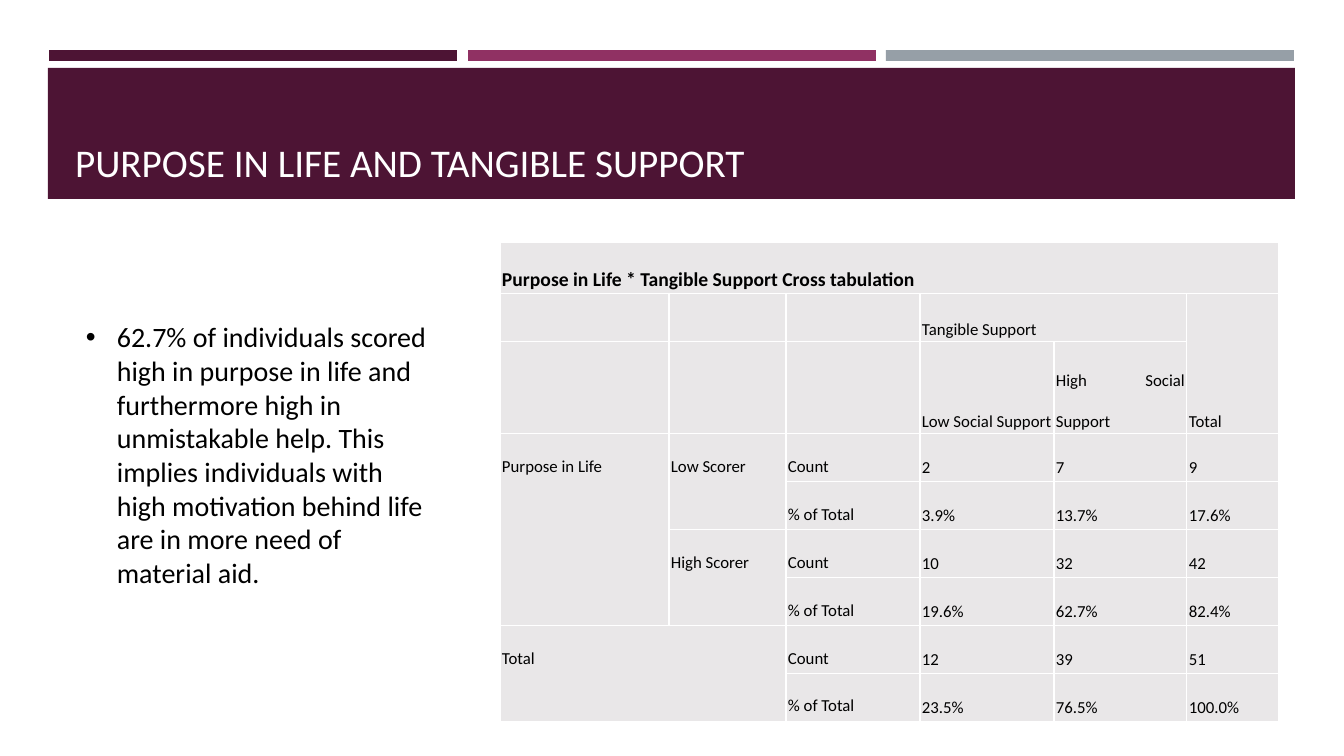
from dataclasses import dataclass

from lxml import etree
from pptx import Presentation, util as u
from pptx.dml.color import RGBColor
from pptx.enum import shapes, text
from pptx.oxml import ns

PX = 914400 / 100.8


@dataclass(frozen=True)
class Theme:
    font: str = "Calibri"
    plum: str = "4D1434"
    magenta: str = "903163"
    slate: str = "969FA7"
    cell: str = "E9E7E8"
    white: str = "FFFFFF"
    black: str = "000000"
    title_size: int = 28
    body_size: int = 20
    caption_size: int = 14
    cell_size: int = 12


theme = Theme()


def px(*lengths):
    """Turn px lengths into a list of EMU lengths."""
    return [u.Emu(round(length * PX)) for length in lengths]


def format_runs(paragraph, size, color, bold=False):
    for run in paragraph.runs:
        run.font.name = theme.font
        run.font.size = u.Pt(size)
        run.font.bold = bold
        run.font.color.rgb = RGBColor.from_string(color)


presentation = Presentation()
presentation.slide_width, presentation.slide_height = px(1344, 756)
slide = presentation.slides.add_slide(presentation.slide_layouts[5])

# Three accent bars above the title band
for left, top, width, height, color in [
    (49, 50, 408, 11, theme.plum),
    (468, 50, 408, 11, theme.magenta),
    (886, 50, 408, 11, theme.slate),
    (48, 68, 1247, 131, theme.plum),
]:
    band = slide.shapes.add_shape(shapes.MSO_SHAPE.RECTANGLE, *px(left, top, width, height))
    band.shadow.inherit = False
    band.fill.solid()
    band.fill.fore_color.rgb = RGBColor.from_string(color)
    band.line.fill.background()

# Title, in front of its band
title = slide.shapes.title
title.left, title.top, title.width, title.height = px(65, 78, 1216, 112)
band.element.addnext(title.element)
title_frame = title.text_frame
title_frame.text = "PURPOSE IN LIFE AND TANGIBLE SUPPORT"
title_frame.auto_size = text.MSO_AUTO_SIZE.NONE
title_frame.vertical_anchor = text.MSO_ANCHOR.BOTTOM
title_frame.paragraphs[0].alignment = text.PP_ALIGN.LEFT
format_runs(title_frame.paragraphs[0], theme.title_size, theme.white)

# Cross tabulation
rows = [
    ["Purpose in Life * Tangible Support Cross tabulation", "", "", "", "", ""],
    ["", "", "", "Tangible Support", "", "Total"],
    ["", "", "", "Low Social Support", "High Social Support", ""],
    ["Purpose in Life", "Low Scorer", "Count", "2", "7", "9"],
    ["", "", "% of Total", "3.9%", "13.7%", "17.6%"],
    ["", "High Scorer", "Count", "10", "32", "42"],
    ["", "", "% of Total", "19.6%", "62.7%", "82.4%"],
    ["Total", "", "Count", "12", "39", "51"],
    ["", "", "% of Total", "23.5%", "76.5%", "100.0%"],
]
column_widths = [169, 117, 134, 134, 133, 92]
row_heights = [48, 48, 92] + [48] * 6
merges = [  # first row, first column, last row, last column
    (0, 0, 0, 5), (1, 3, 1, 4), (1, 5, 2, 5), (3, 0, 6, 0),
    (3, 1, 4, 1), (5, 1, 6, 1), (7, 0, 8, 1),
]
table = slide.shapes.add_table(
    len(rows), len(column_widths),
    *px(500, 242, sum(column_widths), sum(row_heights))).table
table.first_row = table.horz_banding = False
for column, width in zip(table.columns, px(*column_widths)):
    column.width = width
for row, height in zip(table.rows, px(*row_heights)):
    row.height = height
for first_row, first_column, last_row, last_column in merges:
    table.cell(first_row, first_column).merge(table.cell(last_row, last_column))

for row_index, row in enumerate(rows):
    for column_index, words in enumerate(row):
        cell = table.cell(row_index, column_index)
        cell.fill.solid()
        cell.fill.fore_color.rgb = RGBColor.from_string(theme.cell)
        cell.margin_left = cell.margin_right = cell.margin_top = cell.margin_bottom = px(2)[0]
        if row_index in (1, 2):
            cell.vertical_anchor = text.MSO_ANCHOR.BOTTOM
        elif row_index == 0 or column_index >= 3:
            cell.vertical_anchor = text.MSO_ANCHOR.MIDDLE
        else:
            cell.vertical_anchor = text.MSO_ANCHOR.TOP
        properties = cell._tc.get_or_add_tcPr()
        for position, side in enumerate(("a:lnL", "a:lnR", "a:lnT", "a:lnB")):
            border = etree.Element(ns.qn(side), w=str(u.Pt(1)))
            fill = etree.SubElement(border, ns.qn("a:solidFill"))
            etree.SubElement(fill, ns.qn("a:srgbClr"), val=theme.white)
            properties.insert(position, border)
        if words:
            cell.text_frame.text = words
            paragraph = cell.text_frame.paragraphs[0]
            paragraph.alignment = text.PP_ALIGN.JUSTIFY
            paragraph.line_spacing = 2.0
            size = theme.cell_size if row_index else theme.caption_size
            format_runs(paragraph, size, theme.black, bold=row_index == 0)

# Finding beside the table
finding = slide.shapes.add_textbox(*px(76, 315, 364, 315))
finding.text_frame.word_wrap = True
finding.text_frame.text = (
    "62.7% of individuals scored high in purpose in life and furthermore high in "
    "unmistakable help. This implies individuals with high motivation behind life "
    "are in more need of material aid.")
paragraph = finding.text_frame.paragraphs[0]
format_runs(paragraph, theme.body_size, theme.black)
indent = px(31)[0]
properties = paragraph._p.get_or_add_pPr()
properties.set("marL", str(indent))
properties.set("indent", str(-indent))
etree.SubElement(properties, ns.qn("a:buFont"), typeface="Arial")
etree.SubElement(properties, ns.qn("a:buChar"), char="•")

presentation.save("out.pptx")
